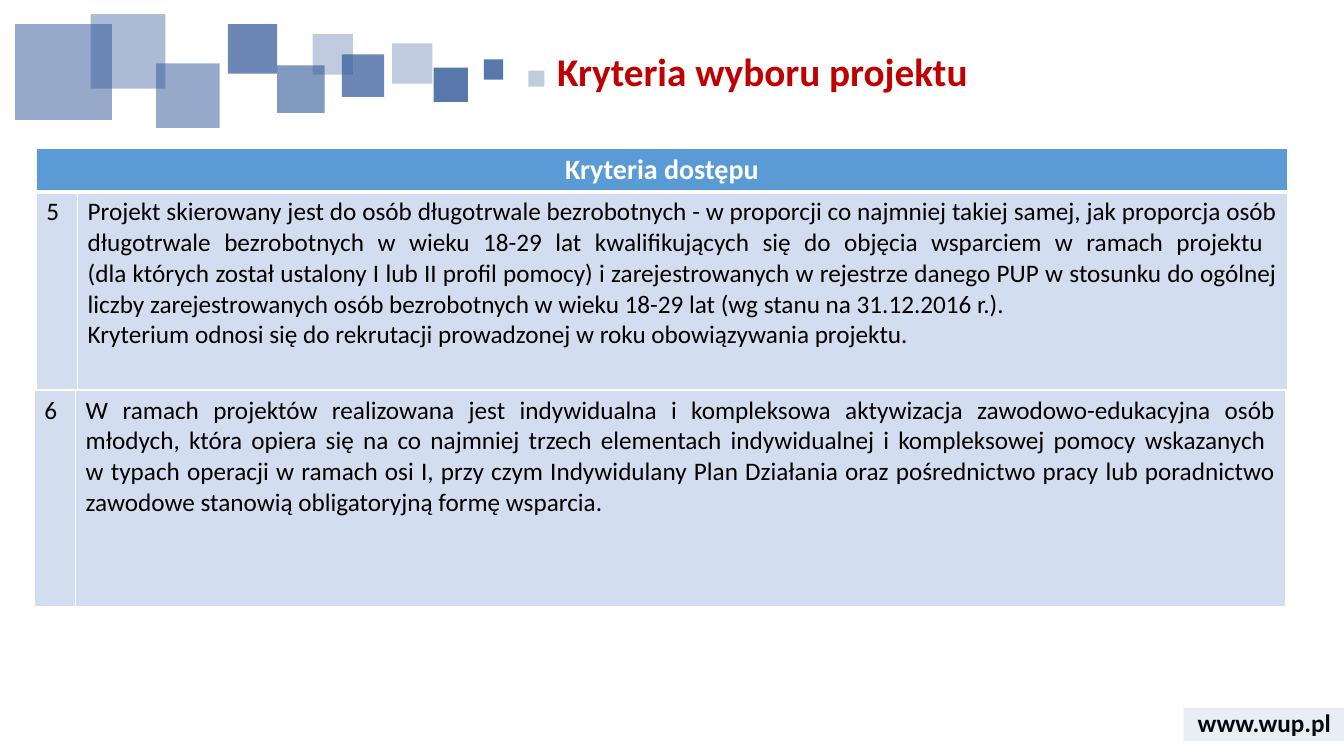
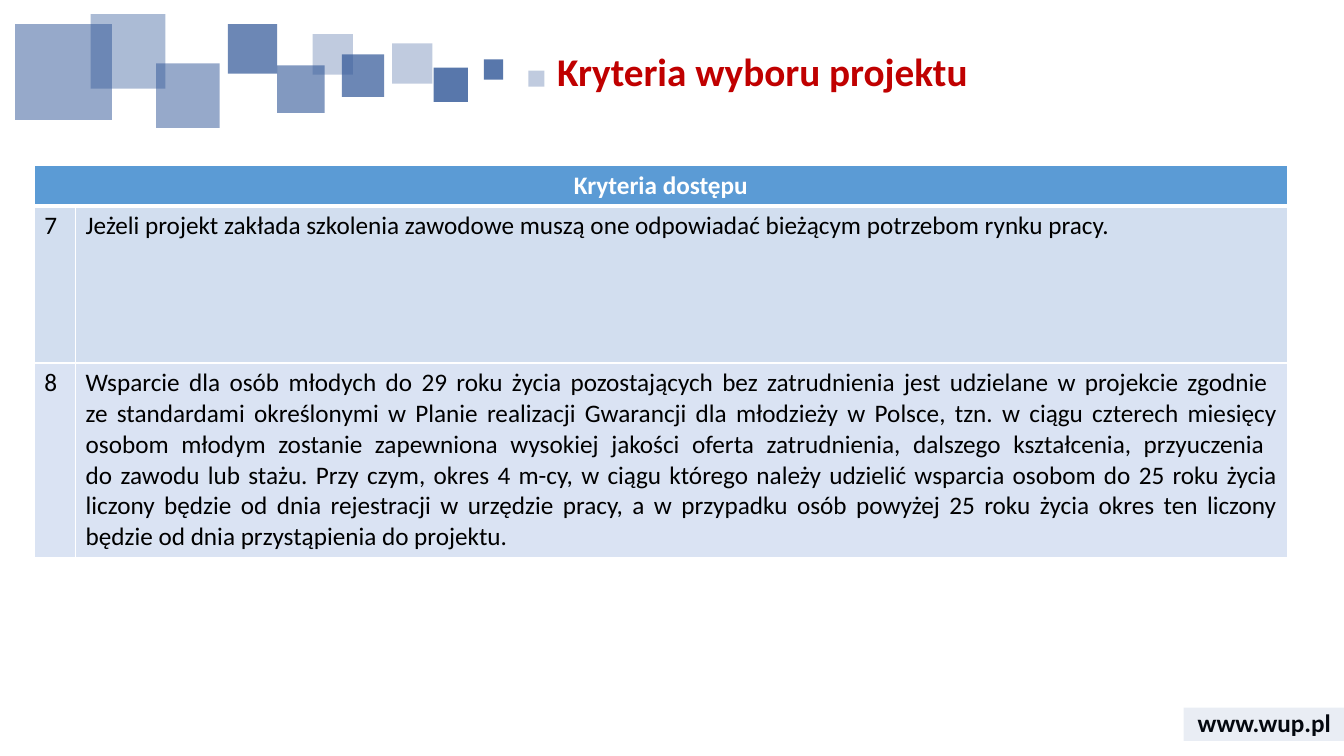
from lxml import etree
from pptx import Presentation
from pptx import util as u
from pptx.dml.color import RGBColor
from pptx.enum import shapes, text
from pptx.oxml import ns

Inches = u.Inches
FONT = "Calibri"
COLOURS = {
    "square": "2F5597", "title": "C00000", "header": "5B9BD5", "row": "D2DEEF",
    "light row": "DAE3F3", "white": "FFFFFF", "black": "000000",
}
TITLE = "Kryteria wyboru projektu"
TABLE_HEADER = "Kryteria dostępu"
FOOTER = "www.wup.pl"
NUMBER_WIDTH = 0.41

# left, top, width, height, opacity in percent
SQUARES = [
    (3.89, 0.43, 0.4, 0.4, 30), (4.3, 0.67, 0.34, 0.34, 80),
    (3.39, 0.54, 0.42, 0.42, 70), (0.15, 0.24, 0.96, 0.95, 50),
    (2.75, 0.65, 0.47, 0.47, 60), (1.55, 0.63, 0.63, 0.64, 50),
    (0.9, 0.14, 0.74, 0.74, 40), (4.8, 0.59, 0.19, 0.2, 80),
    (2.26, 0.24, 0.49, 0.49, 70), (3.1, 0.34, 0.4, 0.4, 30),
    (5.24, 0.7, 0.16, 0.16, 30),
]
FOOTER_BAND = (11.74, 7.02, 1.6, 0.33, 10)

# Each slide is a list of tables; a row is number, text, height, fill.
SLIDES = [
    [
        {"at": (0.36, 1.47), "width": 12.41, "header": (20, 0.43), "rows": [
            ("5", "Projekt skierowany jest do osób długotrwale bezrobotnych - w proporcji "
                  "co najmniej takiej samej, jak proporcja osób długotrwale bezrobotnych "
                  "w wieku 18-29 lat kwalifikujących się do objęcia wsparciem w ramach "
                  "projektu \v(dla których został ustalony I lub II profil pomocy) "
                  "i zarejestrowanych w rejestrze danego PUP w stosunku do ogólnej liczby "
                  "zarejestrowanych osób bezrobotnych w wieku 18-29 lat "
                  "(wg stanu na 31.12.2016 r.).\n"
                  "Kryterium odnosi się do rekrutacji prowadzonej w roku obowiązywania "
                  "projektu.", 1.96, "row"),
        ]},
        {"at": (0.34, 3.87), "width": 12.41, "header": None, "rows": [
            ("6", "W ramach projektów realizowana jest indywidualna i kompleksowa "
                  "aktywizacja zawodowo-edukacyjna osób młodych, która opiera się na co "
                  "najmniej trzech elementach indywidualnej i kompleksowej pomocy "
                  "wskazanych \vw typach operacji w ramach osi I, przy czym Indywidulany "
                  "Plan Działania oraz pośrednictwo pracy lub poradnictwo zawodowe "
                  "stanowią obligatoryjną formę wsparcia.", 2.15, "row"),
        ]},
    ],
    [
        {"at": (0.34, 1.64), "width": 12.43, "header": (18, 0.4), "rows": [
            ("7", "Jeżeli projekt zakłada szkolenia zawodowe muszą one odpowiadać "
                  "bieżącym potrzebom rynku pracy.", 1.56, "row"),
            ("8", "Wsparcie dla osób młodych do 29 roku życia pozostających bez "
                  "zatrudnienia jest udzielane w projekcie zgodnie \vze standardami "
                  "określonymi w Planie realizacji Gwarancji dla młodzieży w Polsce, tzn. "
                  "w ciągu czterech miesięcy osobom młodym zostanie zapewniona wysokiej "
                  "jakości oferta zatrudnienia, dalszego kształcenia, przyuczenia \vdo "
                  "zawodu lub stażu. Przy czym, okres 4 m-cy, w ciągu którego należy "
                  "udzielić wsparcia osobom do 25 roku życia liczony będzie od dnia "
                  "rejestracji w urzędzie pracy, a w przypadku osób powyżej 25 roku życia "
                  "okres ten liczony będzie od dnia przystąpienia do projektu.",
             1.93, "light row"),
        ]},
    ],
]


def colour(name):
    return RGBColor.from_string(COLOURS[name])


def write(frame, content, size, ink, bold=False, align=text.PP_ALIGN.CENTER, spacing=None):
    frame.text = content
    frame.word_wrap = True
    for paragraph in frame.paragraphs:
        paragraph.alignment = align
        paragraph.line_spacing = spacing
        for key, value in {"name": FONT, "size": u.Pt(size), "bold": bold}.items():
            setattr(paragraph.font, key, value)
        paragraph.font.color.rgb = colour(ink)


def add_text(slide, box, *args, left_inset=0.1, **kwargs):
    shape = slide.shapes.add_textbox(*map(Inches, box))
    write(shape.text_frame, *args, **kwargs)
    shape.text_frame.vertical_anchor = text.MSO_ANCHOR.MIDDLE
    shape.text_frame.margin_left = Inches(left_inset)


def add_tint(container, left, top, width, height, opacity):
    """Add a see-through rectangle to a slide's or a group's shapes."""
    shape = container.add_shape(shapes.MSO_SHAPE.RECTANGLE,
                                *map(Inches, (left, top, width, height)))
    shape.shadow.inherit = False
    shape.line.fill.background()
    shape.fill.solid()
    shape.fill.fore_color.rgb = colour("square")
    ink = shape.fill._xPr.find(".//" + ns.qn("a:srgbClr"))
    etree.SubElement(ink, ns.qn("a:alpha"), val=str(opacity * 1000))


def style_cell(cell, fill, borders):
    """Fill a cell and draw white borders, given as {side: points}."""
    cell.fill.solid()
    cell.fill.fore_color.rgb = colour(fill)
    properties = cell._tc.get_or_add_tcPr()
    for index, (side, points) in enumerate(borders.items()):
        line = etree.Element(ns.qn("a:ln" + side), w=str(u.Pt(points)))
        solid = etree.SubElement(line, ns.qn("a:solidFill"))
        etree.SubElement(solid, ns.qn("a:srgbClr"), val=COLOURS["white"])
        properties.insert(index, line)


def add_criteria(slide, at, width, header, rows):
    first = 1 if header else 0
    heights = ([header[1]] if header else []) + [row[2] for row in rows]
    frame = slide.shapes.add_table(len(heights), 2,
                                   *map(Inches, (*at, width, sum(heights))))
    table = frame.table
    table.first_row = bool(header)
    table.horz_banding = False
    for column, size in zip(table.columns, (NUMBER_WIDTH, width - NUMBER_WIDTH)):
        column.width = Inches(size)
    for row, height in zip(table.rows, heights):
        row.height = Inches(height)

    if header:
        table.cell(0, 0).merge(table.cell(0, 1))
        for cell in table.rows[0].cells:
            style_cell(cell, "header", {"L": 1, "R": 1, "T": 1, "B": 3})
        write(table.cell(0, 0).text_frame, TABLE_HEADER, header[0], "white", bold=True)
    for index, (number, criterion, _, fill) in enumerate(rows, first):
        top = 3 if header and index == first else 1
        for column, (content, align) in enumerate(
                [(number, text.PP_ALIGN.LEFT), (criterion, text.PP_ALIGN.JUSTIFY)]):
            cell = table.cell(index, column)
            style_cell(cell, fill, {"L": 1, "R": 1, "T": top, "B": 1})
            write(cell.text_frame, content, 18, "black", align=align)


def add_frame(slide):
    """Add the footer, the squares and the title that all slides share."""
    add_text(slide, (11.74, 6.97, 1.6, 0.4), FOOTER, 18, "black", bold=True)
    group = slide.shapes.add_group_shape()
    for square in SQUARES:
        add_tint(group.shapes, *square)
    add_tint(slide.shapes, *FOOTER_BAND)
    add_text(slide, (0.34, 0.45, 12.41, 0.57), TITLE, 28, "title", bold=True,
             spacing=0.9, left_inset=2.13)


def main():
    presentation = Presentation()
    presentation.slide_width = Inches(13.33)
    presentation.slide_height = Inches(7.5)
    for tables in SLIDES:
        slide = presentation.slides.add_slide(presentation.slide_layouts[6])
        add_frame(slide)
        for table in tables:
            add_criteria(slide, **table)
    presentation.save("out.pptx")


if __name__ == "__main__":
    main()
